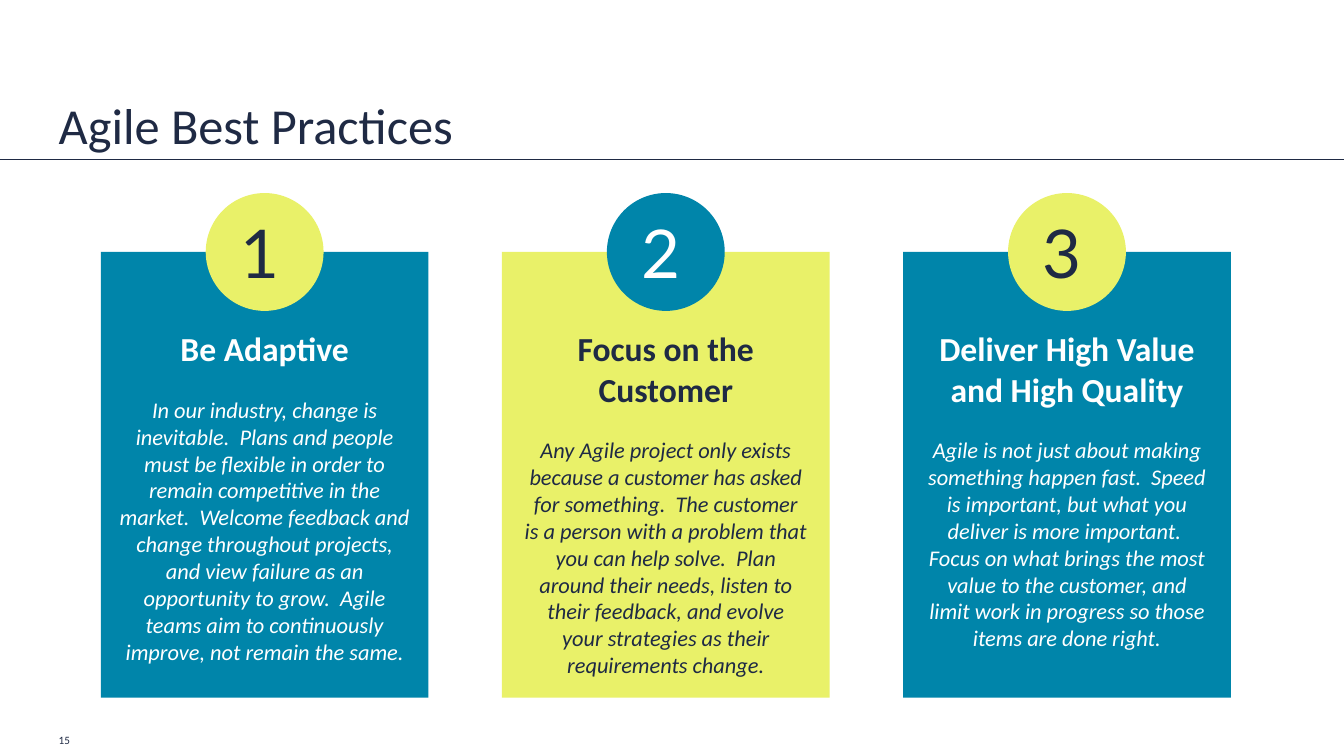
from dataclasses import dataclass

from lxml.etree import SubElement
from pptx import Presentation
from pptx.dml.color import RGBColor
from pptx.enum.shapes import MSO_CONNECTOR as Connector, MSO_SHAPE as Shape
from pptx.enum.text import MSO_ANCHOR as Anchor, PP_ALIGN as Align
from pptx.oxml.ns import qn
from pptx.util import Cm, Pt


@dataclass(frozen=True)
class Theme:
    navy: str = "1F2A44"
    teal: str = "0085AA"
    lime: str = "E9F169"
    white: str = "FFFFFF"
    body_font: str = "Calibri"
    number_font: str = "Lato"
    title_size: int = 36
    number_size: int = 48
    heading_size: int = 24
    body_size: int = 16
    page_size: int = 8


THEME = Theme()

# Content
TITLE = "Agile Best Practices"
PAGE_NUMBER = "15"
# heading, body, width of the text in cm
PRACTICES = [
    ("Be Adaptive",
     "In our industry, change is inevitable.  Plans and people must be flexible in order to "
     "remain competitive in the market.  Welcome feedback and change throughout projects, "
     "and view failure as an opportunity to grow.  Agile teams aim to continuously improve, "
     "not remain the same.", 7.82),
    ("Focus on the Customer",
     "Any Agile project only exists because a customer has asked for something.  The customer "
     "is a person with a problem that you can help solve.  Plan around their needs, listen to "
     "their feedback, and evolve your strategies as their requirements change.", 7.62),
    ("Deliver High Value and High Quality",
     "Agile is not just about making something happen fast.  Speed is important, but what you "
     "deliver is more important.  Focus on what brings the most value to the customer, and "
     "limit work in progress so those items are done right.", 7.62),
]

# Layout in cm
SLIDE_WIDTH, SLIDE_HEIGHT = 33.87, 19.05
MARGIN = 1.48
RULE_TOP = 4.02
CARD_LEFT, CARD_TOP, CARD_WIDTH, CARD_HEIGHT = 2.54, 6.35, 8.26, 11.23
CARD_PITCH = 10.11
CIRCLE = 2.97
NUMBER_INSET, NUMBER_WIDTH, NUMBER_HEIGHT = 0.63, 1.7, 2.31
TEXT_TOP, TEXT_HEIGHT = 8.15, 8.9

presentation = Presentation()
presentation.slide_width, presentation.slide_height = Cm(SLIDE_WIDTH), Cm(SLIDE_HEIGHT)
slide = presentation.slides.add_slide(presentation.slide_layouts[6])


def add_filled(kind, left, top, width, height, color):
    shape = slide.shapes.add_shape(kind, Cm(left), Cm(top), Cm(width), Cm(height))
    shape.shadow.inherit = False
    shape.fill.solid()
    shape.fill.fore_color.rgb = RGBColor.from_string(color)
    shape.line.fill.background()


def add_text(text, left, top, width, height, size, color, font=THEME.body_font,
             align=Align.LEFT, anchor=Anchor.TOP, inset=0.25):
    box = slide.shapes.add_textbox(Cm(left), Cm(top), Cm(width), Cm(height))
    frame = box.text_frame
    frame.word_wrap = True
    frame.vertical_anchor = anchor
    frame.margin_left = Cm(inset)
    frame.text = text
    for paragraph in frame.paragraphs:
        paragraph.alignment = align
        for run in paragraph.runs:
            run.font.name = font
            run.font.size = Pt(size)
            run.font.color.rgb = RGBColor.from_string(color)
    return frame


# Title, rule and page number
add_text(TITLE, MARGIN, 1.83, 30.91, 2.2, THEME.title_size, THEME.navy,
         anchor=Anchor.BOTTOM, inset=0)
rule = slide.shapes.add_connector(Connector.STRAIGHT, 0, Cm(RULE_TOP),
                                  Cm(SLIDE_WIDTH), Cm(RULE_TOP))
rule.line.color.rgb = RGBColor.from_string(THEME.navy)
rule.line.width = Pt(0.5)
SubElement(rule._element.spPr, qn("a:effectLst"))
add_text(PAGE_NUMBER, MARGIN, 18.36, 2.33, 0.6, THEME.page_size, THEME.navy,
         anchor=Anchor.MIDDLE, inset=0)

# Numbered cards, alternating teal and lime
for index, (heading, body, text_width) in enumerate(PRACTICES):
    left = CARD_LEFT + index * CARD_PITCH
    center = left + CARD_WIDTH / 2
    circle_left = center - CIRCLE / 2
    card_color, circle_color = THEME.teal, THEME.lime
    text_color, number_color = THEME.white, THEME.navy
    if index % 2:
        card_color, circle_color = circle_color, card_color
        text_color, number_color = number_color, text_color

    add_filled(Shape.RECTANGLE, left, CARD_TOP, CARD_WIDTH, CARD_HEIGHT, card_color)
    add_filled(Shape.OVAL, circle_left, CARD_TOP - CIRCLE / 2, CIRCLE, CIRCLE, circle_color)
    add_text(str(index + 1), circle_left + NUMBER_INSET, CARD_TOP - NUMBER_HEIGHT / 2,
             NUMBER_WIDTH, NUMBER_HEIGHT, THEME.number_size, number_color, THEME.number_font)

    frame = add_text(f"{heading}\n{body}", center - text_width / 2, TEXT_TOP, text_width,
                     TEXT_HEIGHT, THEME.body_size, text_color, align=Align.CENTER)
    heading_paragraph, body_paragraph = frame.paragraphs
    heading_font = heading_paragraph.runs[0].font
    heading_font.size, heading_font.bold = Pt(THEME.heading_size), True
    body_paragraph.runs[0].font.italic = True
    body_paragraph.space_before = Pt(THEME.body_size * 1.22)

presentation.save("out.pptx")
